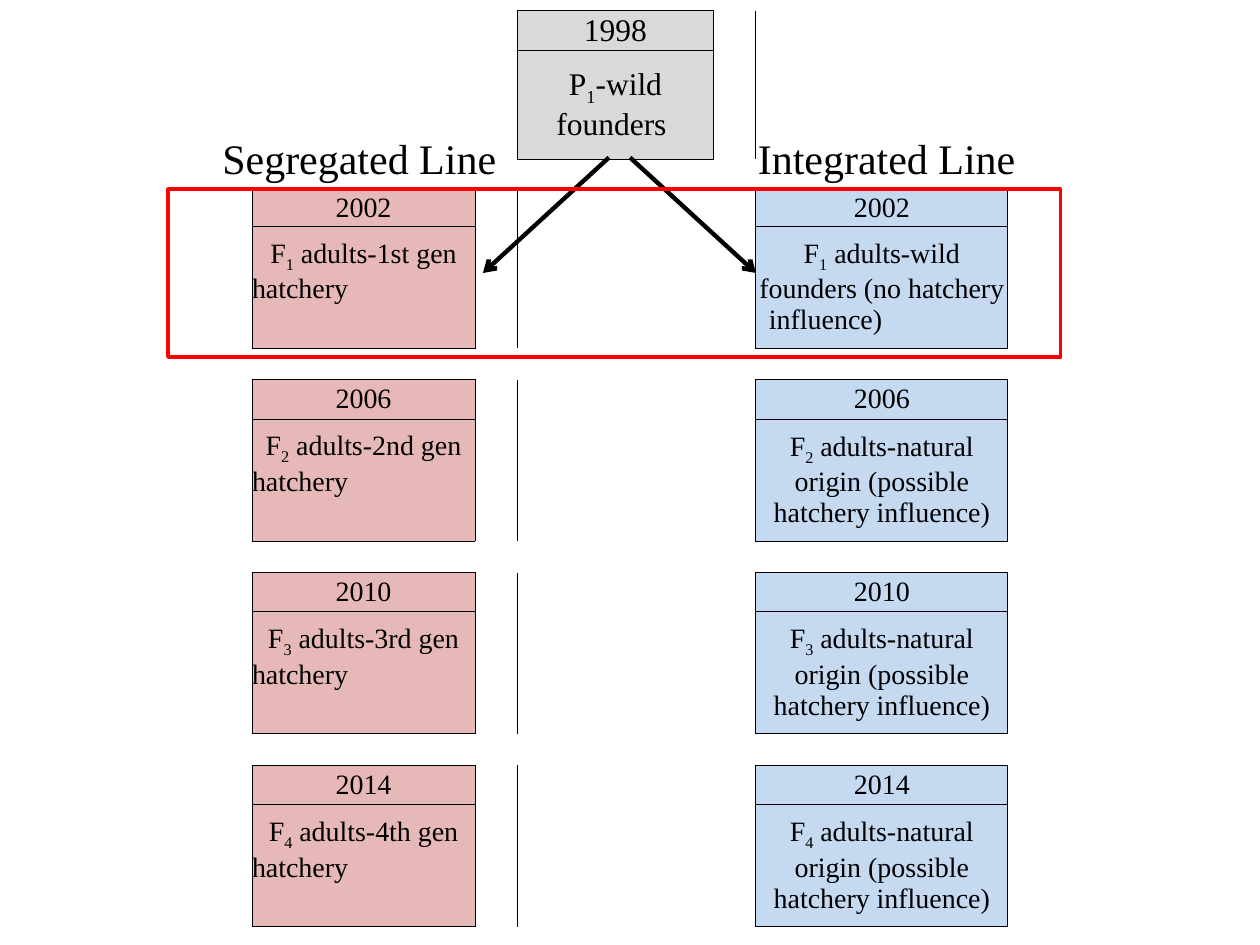
from dataclasses import dataclass

from lxml.etree import SubElement
from pptx import Presentation
from pptx.dml.color import RGBColor
from pptx.enum.shapes import MSO_CONNECTOR, MSO_SHAPE
from pptx.enum.text import MSO_ANCHOR, MSO_AUTO_SIZE, PP_ALIGN
from pptx.oxml.ns import qn
from pptx.util import Pt


@dataclass(frozen=True)
class Theme:
    font: str = "Times New Roman"
    ink: str = "000000"
    founders: str = "D9D9D9"
    segregated: str = "E6B8B7"
    integrated: str = "C5D9F1"
    highlight: str = "FF0000"
    heading_size: int = 24
    founders_size: int = 18
    line_size: int = 16
    spacer_size: int = 8


theme = Theme()
NO_STYLE = "{2D5ABB26-0587-4C30-8999-92F81FD0307C}"


def format_runs(para, size):
    for span in para.runs:
        span.font.name = theme.font
        span.font.size = Pt(size)
        span.font.color.rgb = RGBColor.from_string(theme.ink)


def add_border(cell, side):
    properties = cell._tc.get_or_add_tcPr()
    line = SubElement(properties, qn(f"a:ln{side}"), w=str(Pt(0.5)))
    fill = SubElement(line, qn("a:solidFill"))
    SubElement(fill, qn("a:srgbClr"), val=theme.ink)


deck = Presentation()
deck.slide_width, deck.slide_height = Pt(720), Pt(540)
page = deck.slides.add_slide(deck.slide_layouts[6])

# Pedigree: each entry is fill, size, and lines of (letter, generation, text, alignment)
CENTER, LEFT = PP_ALIGN.CENTER, PP_ALIGN.LEFT
entries = {
    (0, 2): (theme.founders, theme.founders_size, [("1998", "", "", CENTER)]),
    (1, 2): (theme.founders, theme.founders_size, [("P", "1", "-wild founders ", CENTER)]),
}
generations = [("2002", "1st"), ("2006", "2nd"), ("2010", "3rd"), ("2014", "4th")]
for index, (year, ordinal) in enumerate(generations):
    row, number = 3 + 3 * index, str(index + 1)
    hatchery = [("F", number, f" adults-{ordinal} gen", CENTER), ("hatchery", "", "", LEFT)]
    natural = [("F", number, " adults-natural origin (possible hatchery influence)", CENTER)]
    if index == 0:
        natural = [("F", number, " adults-wild founders (no hatchery", CENTER),
                   ("influence)", "", "", LEFT)]
    for column, color, body in ((0, theme.segregated, hatchery), (4, theme.integrated, natural)):
        entries[row, column] = (color, theme.line_size, [(year, "", "", CENTER)])
        entries[row + 1, column] = (color, theme.line_size, body)

# Table grid
widths = [127.5, 24, 112.5, 24, 144]
heights = [23, 62, 17.25, 21, 69.75] + [18, 22.5, 69.75] * 3
frame = page.shapes.add_table(len(heights), len(widths), Pt(144), Pt(6),
                              Pt(sum(widths)), Pt(sum(heights)))
table = frame.table
table.first_row = table.horz_banding = False
table._tbl.tblPr.find(qn("a:tableStyleId")).text = NO_STYLE
for column, width in zip(table.columns, widths):
    column.width = Pt(width)
for row, height in zip(table.rows, heights):
    row.height = Pt(height)

# Table cells
neighbours = {"L": (0, -1), "R": (0, 1), "T": (-1, 0), "B": (1, 0)}
for r in range(len(heights)):
    for c in range(len(widths)):
        cell = table.cell(r, c)
        cell.margin_left = cell.margin_right = cell.margin_top = cell.margin_bottom = 0
        cell.vertical_anchor = MSO_ANCHOR.MIDDLE
        for side, (down, across) in neighbours.items():
            if (r, c) in entries or (r + down, c + across) in entries:
                add_border(cell, side)
        if (r, c) not in entries:
            cell.fill.background()
            SubElement(cell.text_frame.paragraphs[0]._p, qn("a:endParaRPr"),
                       sz=str(theme.spacer_size * 100))
            continue
        color, size, lines = entries[r, c]
        cell.fill.solid()
        cell.fill.fore_color.rgb = RGBColor.from_string(color)
        for position, (letter, generation, words, alignment) in enumerate(lines):
            text_frame = cell.text_frame
            para = text_frame.add_paragraph() if position else text_frame.paragraphs[0]
            para.alignment = alignment
            for text in filter(None, (letter, generation, words)):
                para.add_run().text = text
            format_runs(para, size)
            if generation:
                para.runs[1].font._element.set("baseline", "-25000")
        # Hatchery text sits high in its cell; the wild-founder ending is indented
        if len(lines) == 2 and c == 0:
            cell.margin_bottom = Pt(18)
        elif len(lines) == 2:
            para._p.get_or_add_pPr().set("marL", str(Pt(7.5)))
            para._p.get_or_add_pPr().set("indent", "0")

# Line headings
for left, heading in ((120, "Segregated Line"), (426, "Integrated Line")):
    box = page.shapes.add_textbox(Pt(left), Pt(72), Pt(180), Pt(36))
    box.text_frame.word_wrap = True
    box.text_frame.auto_size = MSO_AUTO_SIZE.SHAPE_TO_FIT_TEXT
    box.text_frame.text = heading
    format_runs(box.text_frame.paragraphs[0], theme.heading_size)

# Arrows from the founders to both lines
for start, end in ((348, 276), (360, 432)):
    arrow = page.shapes.add_connector(MSO_CONNECTOR.STRAIGHT, Pt(start), Pt(90), Pt(end), Pt(156))
    arrow.line.color.rgb = RGBColor.from_string(theme.ink)
    arrow.line.width = Pt(2.5)
    SubElement(arrow.line._get_or_add_ln(), qn("a:tailEnd"), type="arrow")
    SubElement(arrow._element.spPr, qn("a:effectLst"))

# Highlight around the first generation
highlight = page.shapes.add_shape(MSO_SHAPE.RECTANGLE, Pt(96), Pt(108), Pt(510), Pt(96))
highlight.shadow.inherit = False
highlight.fill.background()
highlight.line.color.rgb = RGBColor.from_string(theme.highlight)
highlight.line.width = Pt(2)

deck.save("out.pptx")
